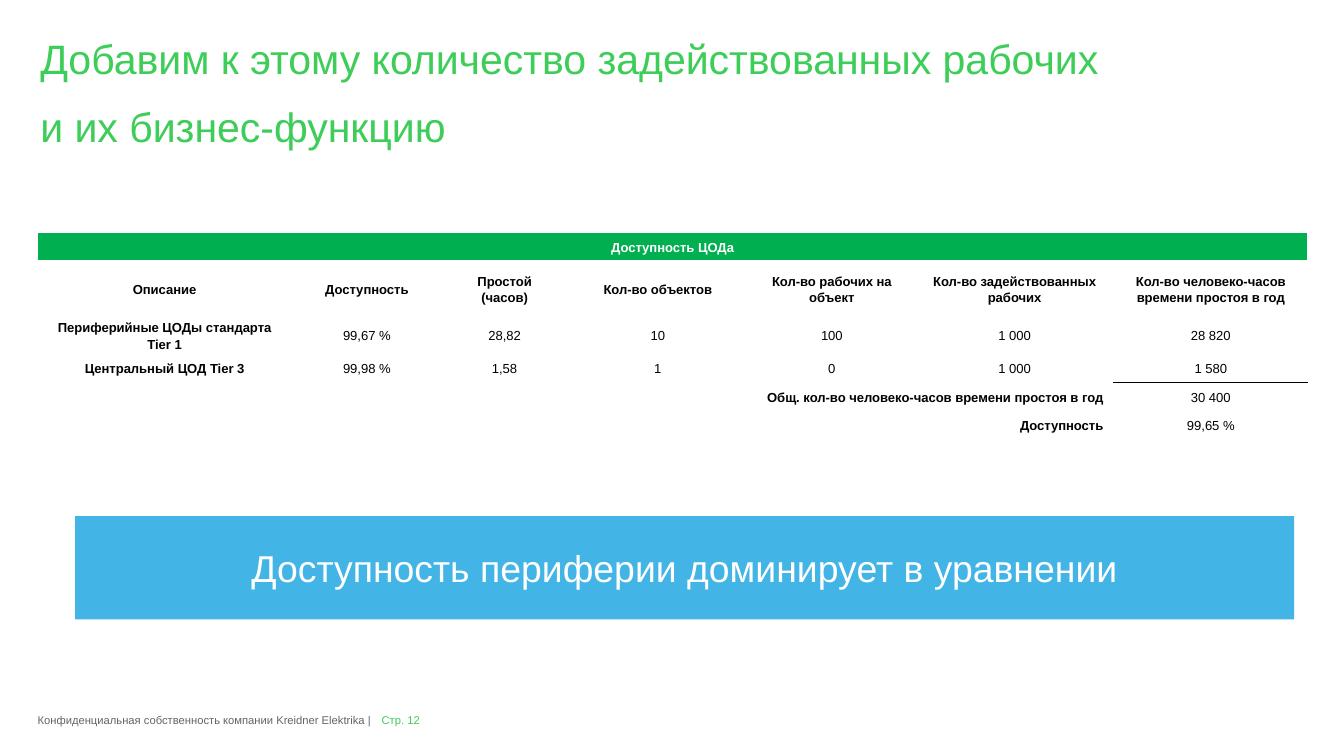
from lxml import etree
from pptx import Presentation
from pptx.dml.color import RGBColor
from pptx.enum.shapes import MSO_SHAPE
from pptx.enum.text import MSO_ANCHOR, MSO_AUTO_SIZE, PP_ALIGN
from pptx.oxml.ns import qn
from pptx.util import Inches, Pt

FONT = "Arial"
BRAND_GREEN = RGBColor(0x3D, 0xCD, 0x58)
HEADER_GREEN = RGBColor(0x00, 0xB0, 0x50)
SKY_BLUE = RGBColor(0x42, 0xB4, 0xE6)
GRAY = RGBColor(0x62, 0x64, 0x69)
BLACK = RGBColor(0, 0, 0)
WHITE = RGBColor(0xFF, 0xFF, 0xFF)

LEFT, CENTER, RIGHT = PP_ALIGN.LEFT, PP_ALIGN.CENTER, PP_ALIGN.RIGHT
TOP, MIDDLE = MSO_ANCHOR.TOP, MSO_ANCHOR.MIDDLE
NO_AUTOFIT = MSO_AUTO_SIZE.NONE
GROW_TO_TEXT = MSO_AUTO_SIZE.SHAPE_TO_FIT_TEXT
RECTANGLE = MSO_SHAPE.RECTANGLE
TITLE_ONLY = 5

TITLE_LINES = ["Добавим к этому количество задействованных рабочих",
               "и их бизнес-функцию"]
COLUMN_WIDTHS = [1.89, 1.12, 0.93, 1.35, 1.24, 1.48, 1.44]
ROW_HEIGHTS = [0.21, 0.42, 0.21, 0.22, 0.21, 0.21]
TABLE_ROWS = [
    ["Доступность ЦОДа", "", "", "", "", "", ""],
    ["Описание", "Доступность", "Простой (часов)", "Кол-во объектов",
     "Кол-во рабочих на объект", "Кол-во задействованных рабочих",
     "Кол-во человеко-часов времени простоя в год"],
    ["Периферийные ЦОДы стандарта Tier 1", "99,67 %", "28,82", "10", "100",
     "1 000", "28 820"],
    ["Центральный ЦОД Tier 3", "99,98 %", "1,58", "1", "0", "1 000", "1 580"],
    ["", "", "", "", "Общ. кол-во человеко-часов времени простоя в год", "",
     "30 400"],
    ["", "", "", "", "", "Доступность", "99,65 %"],
]
FIRST_TOTAL_ROW = 4
LAST_COLUMN = len(COLUMN_WIDTHS) - 1


def add_text(paragraph, text, size, color, align=LEFT, bold=False):
    paragraph.alignment = align
    run = paragraph.add_run()
    run.text = text
    run.font.name = FONT
    run.font.size = Pt(size)
    run.font.bold = bold
    run.font.color.rgb = color


def set_margins(frame, horizontal, vertical):
    frame.margin_left = frame.margin_right = Inches(horizontal)
    frame.margin_top = frame.margin_bottom = Inches(vertical)


def add_title(slide, left, top, width, height):
    title = slide.shapes.title
    title.left, title.top = Inches(left), Inches(top)
    title.width, title.height = Inches(width), Inches(height)
    frame = title.text_frame
    frame.word_wrap = True
    frame.auto_size = NO_AUTOFIT
    frame.vertical_anchor = TOP
    set_margins(frame, 0, 0)
    for index, line in enumerate(TITLE_LINES):
        paragraph = frame.add_paragraph() if index else frame.paragraphs[0]
        properties = paragraph._p.get_or_add_pPr()
        properties.set("marL", str(Inches(0.19)))
        properties.set("indent", str(Inches(-0.17)))
        paragraph.space_before = Pt(5 if index else 0)
        paragraph.space_after = Pt(5)
        add_text(paragraph, line, 22, BRAND_GREEN)


def add_cell_border(cell, side):
    line = etree.Element(qn(f"a:{side}"), w=str(Pt(1)))
    fill = etree.SubElement(line, qn("a:solidFill"))
    etree.SubElement(fill, qn("a:srgbClr"), val=str(BLACK))
    cell._tc.get_or_add_tcPr().insert(0, line)


def fill_cell(cell, text, row, column):
    is_total_label = row >= FIRST_TOTAL_ROW and column < LAST_COLUMN
    is_label = row < 2 or column == 0 or is_total_label
    set_margins(cell, 0.08, 0)
    cell.vertical_anchor = MIDDLE
    if row == 0:
        cell.fill.solid()
        cell.fill.fore_color.rgb = HEADER_GREEN
    else:
        cell.fill.background()
    paragraph = cell.text_frame.paragraphs[0]
    paragraph.line_spacing = 1.15
    if text:
        add_text(paragraph, text, 7, BLACK if row else WHITE,
                 RIGHT if is_total_label else CENTER, is_label)
    else:
        # Small end mark keeps empty cells from stretching the row
        etree.SubElement(paragraph._p, qn("a:endParaRPr"), sz="700")


def add_availability_table(slide, left, top, width, height):
    table = slide.shapes.add_table(
        len(ROW_HEIGHTS), len(COLUMN_WIDTHS), Inches(left), Inches(top),
        Inches(width), Inches(height)).table
    table.first_row = table.horz_banding = False
    for column, column_width in zip(table.columns, COLUMN_WIDTHS):
        column.width = Inches(column_width)
    for row, row_height in zip(table.rows, ROW_HEIGHTS):
        row.height = Inches(row_height)
    for row, texts in enumerate(TABLE_ROWS):
        for column, text in enumerate(texts):
            fill_cell(table.cell(row, column), text, row, column)
    table.cell(0, 0).merge(table.cell(0, LAST_COLUMN))
    table.cell(FIRST_TOTAL_ROW, 4).merge(table.cell(FIRST_TOTAL_ROW, 5))
    # Sum line above the total
    add_cell_border(table.cell(FIRST_TOTAL_ROW - 1, LAST_COLUMN), "lnB")
    add_cell_border(table.cell(FIRST_TOTAL_ROW, LAST_COLUMN), "lnT")


def add_conclusion(slide, left, top, width, height):
    banner = slide.shapes.add_shape(RECTANGLE, Inches(left), Inches(top),
                                    Inches(width), Inches(height))
    banner.shadow.inherit = False
    banner.fill.solid()
    banner.fill.fore_color.rgb = SKY_BLUE
    banner.line.fill.background()
    frame = banner.text_frame
    frame.word_wrap = True
    frame.vertical_anchor = MIDDLE
    set_margins(frame, 0.08, 0.04)
    add_text(frame.paragraphs[0],
             "Доступность периферии доминирует в уравнении",
             20, WHITE, CENTER)


def add_footer(slide, left, top, width, height):
    parts = [
        (2.56, 0.57, "Стр. 12", BRAND_GREEN),
        (0, width, "Конфиденциальная собственность компании "
                   "Kreidner Elektrika |", GRAY),
    ]
    for offset, part_width, text, color in parts:
        box = slide.shapes.add_textbox(Inches(left + offset), Inches(top),
                                       Inches(part_width), Inches(height))
        frame = box.text_frame
        frame.word_wrap = True
        frame.auto_size = GROW_TO_TEXT
        frame.vertical_anchor = MIDDLE
        set_margins(frame, 0, 0)
        add_text(frame.paragraphs[0], text, 6, color)


def main():
    presentation = Presentation()
    # Widescreen 16:9
    presentation.slide_width = Inches(10)
    presentation.slide_height = presentation.slide_width * 9 // 16
    slide = presentation.slides.add_slide(
        presentation.slide_layouts[TITLE_ONLY])
    add_footer(slide, 0.28, 5.31, 3.29, 0.1)
    add_title(slide, 0.28, 0.25, 9.46, 0.4)
    add_conclusion(slide, 0.56, 3.84, 9.07, 0.77)
    add_availability_table(slide, 0.28, 1.73, 9.45, 1.48)
    presentation.save("out.pptx")


if __name__ == "__main__":
    main()
